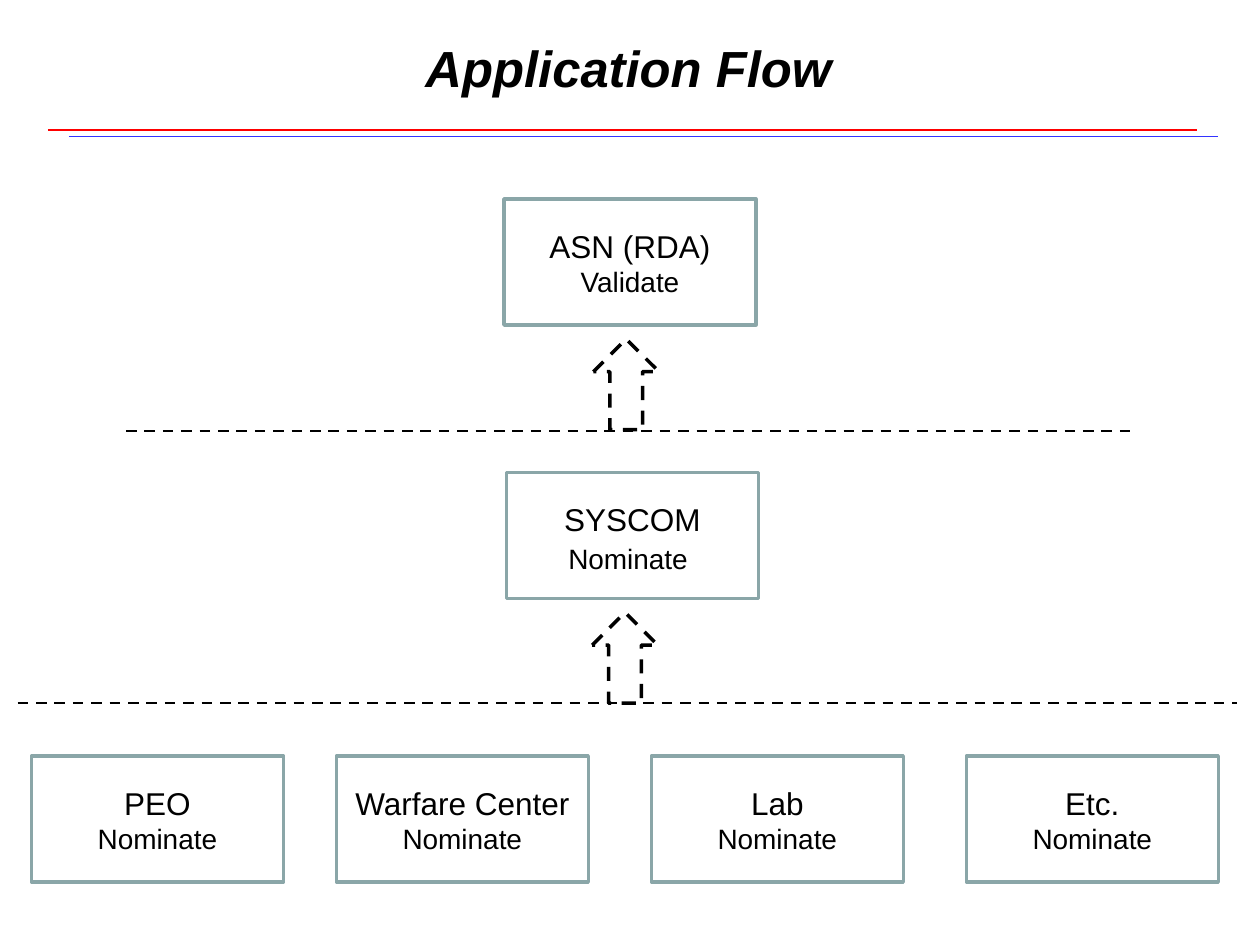
import pptx
import pptx.util
import pptx.dml.color
import pptx.enum.dml
import pptx.enum.shapes
import pptx.enum.text
import pptx.oxml
import pptx.oxml.ns

Inches = pptx.util.Inches
COLORS = {"text": "000000", "box": "8AA6A8", "rule": "FF0000", "rule_shadow": "3333FF"}


def write_text(paragraph, text, size=18, bold=False, italic=False):
    paragraph.alignment = pptx.enum.text.PP_ALIGN.CENTER
    run = paragraph.add_run()
    run.text = text
    run.font.name = "Arial"
    run.font.size = pptx.util.Pt(size)
    run.font.bold = bold
    run.font.italic = italic
    run.font.color.rgb = pptx.dml.color.RGBColor.from_string(COLORS["text"])


def style_line(line, color, width, dashed=False):
    line.color.rgb = pptx.dml.color.RGBColor.from_string(COLORS[color])
    line.width = pptx.util.Pt(width)
    if dashed:
        line.dash_style = pptx.enum.dml.MSO_LINE.DASH


presentation = pptx.Presentation()
presentation.slide_width = Inches(10)
presentation.slide_height = Inches(7.5)
slide = presentation.slides.add_slide(presentation.slide_layouts[5])

title = slide.shapes.title
title.left, title.top, title.width, title.height = Inches(0.92), Inches(0), Inches(8.14), Inches(1.07)
title.text_frame.vertical_anchor = pptx.enum.text.MSO_ANCHOR.MIDDLE
write_text(title.text_frame.paragraphs[0], "Application Flow", size=29, bold=True, italic=True)

namespace = pptx.oxml.ns.nsdecls("a")
rule_effect = (
    f'<a:effectLst {namespace}><a:outerShdw dist="160020" dir="1080000" algn="ctr" rotWithShape="0">'
    f'<a:srgbClr val="{COLORS["rule_shadow"]}"/></a:outerShdw></a:effectLst>'
)
no_effect = f"<a:effectLst {namespace}/>"
lines = [
    (0.38, 9.5, 1.03, "rule", 1, False, rule_effect),
    (1, 9, 3.42, "text", 1.5, True, no_effect),
    (0.14, 9.82, 5.58, "text", 1.5, True, no_effect),
]
for start, end, y, color, width, dashed, effect in lines:
    connector = slide.shapes.add_connector(
        pptx.enum.shapes.MSO_CONNECTOR.STRAIGHT, Inches(start), Inches(y), Inches(end), Inches(y)
    )
    style_line(connector.line, color, width, dashed)
    connector._element.spPr.append(pptx.oxml.parse_xml(effect))

stages = [
    (4, 1.58, "ASN (RDA)", "Validate"),
    (4.02, 3.75, "SYSCOM", "Nominate"),
    (0.25, 6, "PEO", "Nominate"),
    (2.67, 6, "Warfare Center", "Nominate"),
    (5.17, 6, "Lab", "Nominate"),
    (7.67, 6, "Etc.", "Nominate"),
]
for left, top, name, action in stages:
    box = slide.shapes.add_shape(
        pptx.enum.shapes.MSO_SHAPE.RECTANGLE, Inches(left), Inches(top), Inches(2), Inches(1)
    )
    box.shadow.inherit = False
    box.fill.background()
    style_line(box.line, "box", 2)
    label = slide.shapes.add_textbox(Inches(left), Inches(top + 0.17), Inches(2), Inches(0.67))
    frame = label.text_frame
    frame.word_wrap = True
    write_text(frame.paragraphs[0], name)
    action_paragraph = frame.add_paragraph()
    write_text(action_paragraph, action, size=16)
    if name == "SYSCOM":
        write_text(action_paragraph, " ")
        label.height = Inches(0.71)
    slide.shapes.add_group_shape([box, label])

for left, top in [(4.7, 4.86), (4.71, 2.69)]:
    arrow = slide.shapes.add_shape(
        pptx.enum.shapes.MSO_SHAPE.UP_ARROW, Inches(left), Inches(top), Inches(0.52), Inches(0.72)
    )
    arrow.shadow.inherit = False
    arrow.fill.background()
    style_line(arrow.line, "text", 2, dashed=True)

presentation.save("out.pptx")
